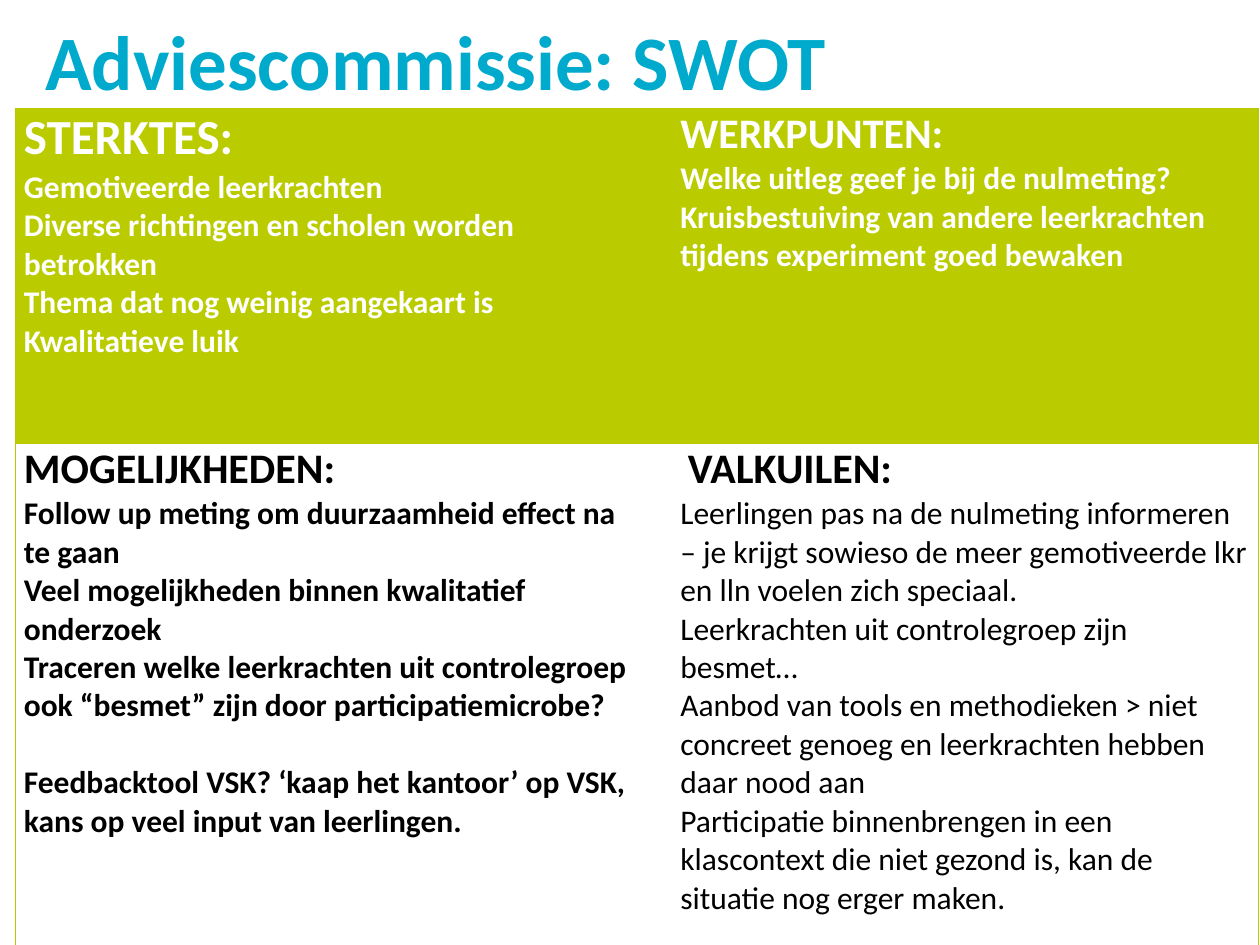
from dataclasses import dataclass

import pptx
import pptx.dml.color
import pptx.enum.text
import pptx.oxml.ns
import pptx.util
from lxml import etree

Inches = pptx.util.Inches
Pt = pptx.util.Pt

FONT = "Calibri"
COLORS = {
    "title": "00AACC",
    "lime": "BACC00",
    "edge": "B7C800",
    "white": "FFFFFF",
    "black": "000000",
}
COLS = (5.21, 4.66)
ROWS = (2.66, 3.99)
HANG = 0.38


@dataclass
class Panel:
    head: str
    lines: list[str]
    fill: str
    ink: str
    size: int = 24
    bold: bool = True
    shift: float = 0
    gap: int | None = None  # index of the line that has space above it


GRID = [
    [
        Panel("STERKTES:", [
            "Gemotiveerde leerkrachten",
            "Diverse richtingen en scholen worden",
            "betrokken",
            "Thema dat nog weinig aangekaart is",
            "Kwalitatieve luik",
        ], "lime", "white", size=28),
        Panel("WERKPUNTEN:", [
            "Welke uitleg geef je bij de nulmeting?",
            "Kruisbestuiving van andere leerkrachten",
            "tijdens experiment goed bewaken",
        ], "lime", "white"),
    ],
    [
        Panel("MOGELIJKHEDEN:", [
            "Follow up meting om duurzaamheid effect na",
            "te gaan",
            "Veel mogelijkheden binnen kwalitatief",
            "onderzoek",
            "Traceren welke leerkrachten uit controlegroep",
            "ook “besmet” zijn door participatiemicrobe?",
            "Feedbacktool VSK? ‘kaap het kantoor’ op VSK,",
            "kans op veel input van leerlingen.",
        ], "white", "black", gap=6),
        Panel("VALKUILEN:", [
            "Leerlingen pas na de nulmeting informeren",
            "– je krijgt sowieso de meer gemotiveerde lkr",
            "en lln voelen zich speciaal.",
            "Leerkrachten uit controlegroep zijn",
            "besmet…",
            "Aanbod van tools en methodieken > niet",
            "concreet genoeg en leerkrachten hebben",
            "daar nood aan",
            "Participatie binnenbrengen in een",
            "klascontext die niet gezond is, kan de",
            "situatie nog erger maken.",
        ], "white", "black", bold=False, shift=0.06),
    ],
]


def rgb(name: str) -> pptx.dml.color.RGBColor:
    return pptx.dml.color.RGBColor.from_string(COLORS[name])


def style(para, size: int, ink: str, bold: bool) -> None:
    for run in para.runs:
        run.font.name = FONT
        run.font.size = Pt(size)
        run.font.bold = bold
        run.font.color.rgb = rgb(ink)


def indent(para, left: float, first: float = 0) -> None:
    props = para._p.get_or_add_pPr()
    props.set("marL", str(Inches(left)))
    props.set("indent", str(Inches(first)))


def border(cell, shown: dict[str, bool]) -> None:
    """Draw the cell edges marked True and hide the others."""
    qn = pptx.oxml.ns.qn
    props = cell._tc.get_or_add_tcPr()
    for side, seen in shown.items():
        line = etree.SubElement(props, qn(f"a:ln{side}"), w=str(Pt(0.75)))
        paint = etree.SubElement(line, qn("a:solidFill" if seen else "a:noFill"))
        if seen:
            etree.SubElement(paint, qn("a:srgbClr"), val=COLORS["edge"])


def fill_cell(cell, panel: Panel) -> None:
    cell.fill.solid()
    cell.fill.fore_color.rgb = rgb(panel.fill)
    cell.margin_left = cell.margin_right = Inches(0.07)
    cell.margin_top = cell.margin_bottom = 0
    frame = cell.text_frame
    frame.text = "\n".join([panel.head, *panel.lines])
    head, *body = frame.paragraphs
    indent(head, panel.shift)
    style(head, panel.size, panel.ink, True)
    for i, para in enumerate(body):
        indent(para, HANG, -HANG)
        if i == panel.gap:
            para.space_before = Pt(22)
        style(para, 18, panel.ink, panel.bold)


def add_title(slide, text: str) -> None:
    box = slide.shapes.add_textbox(
        Inches(0.36), Inches(-0.4), Inches(8.98), Inches(1.25))
    frame = box.text_frame
    frame.word_wrap = True
    frame.vertical_anchor = pptx.enum.text.MSO_ANCHOR.BOTTOM
    frame.margin_left = frame.margin_right = 0
    frame.margin_top = frame.margin_bottom = 0
    frame.text = text
    frame.paragraphs[0].line_spacing = 0.9
    style(frame.paragraphs[0], 44, "title", True)


def add_swot(slide) -> None:
    table = slide.shapes.add_table(
        len(ROWS), len(COLS), Inches(0.12), Inches(0.86),
        Inches(sum(COLS)), Inches(sum(ROWS))).table
    table.first_row = table.horz_banding = False
    for col, width in zip(table.columns, COLS):
        col.width = Inches(width)
    for row, height in zip(table.rows, ROWS):
        row.height = Inches(height)
    for r, panels in enumerate(GRID):
        for c, panel in enumerate(panels):
            cell = table.cell(r, c)
            border(cell, {"L": c == 0, "R": c == 1, "T": True, "B": True})
            fill_cell(cell, panel)


def main() -> None:
    deck = pptx.Presentation()
    deck.slide_width = Inches(10)
    deck.slide_height = Inches(7.5)
    slide = deck.slides.add_slide(deck.slide_layouts[6])
    add_title(slide, "Adviescommissie: SWOT")
    add_swot(slide)
    deck.save("out.pptx")


if __name__ == "__main__":
    main()
